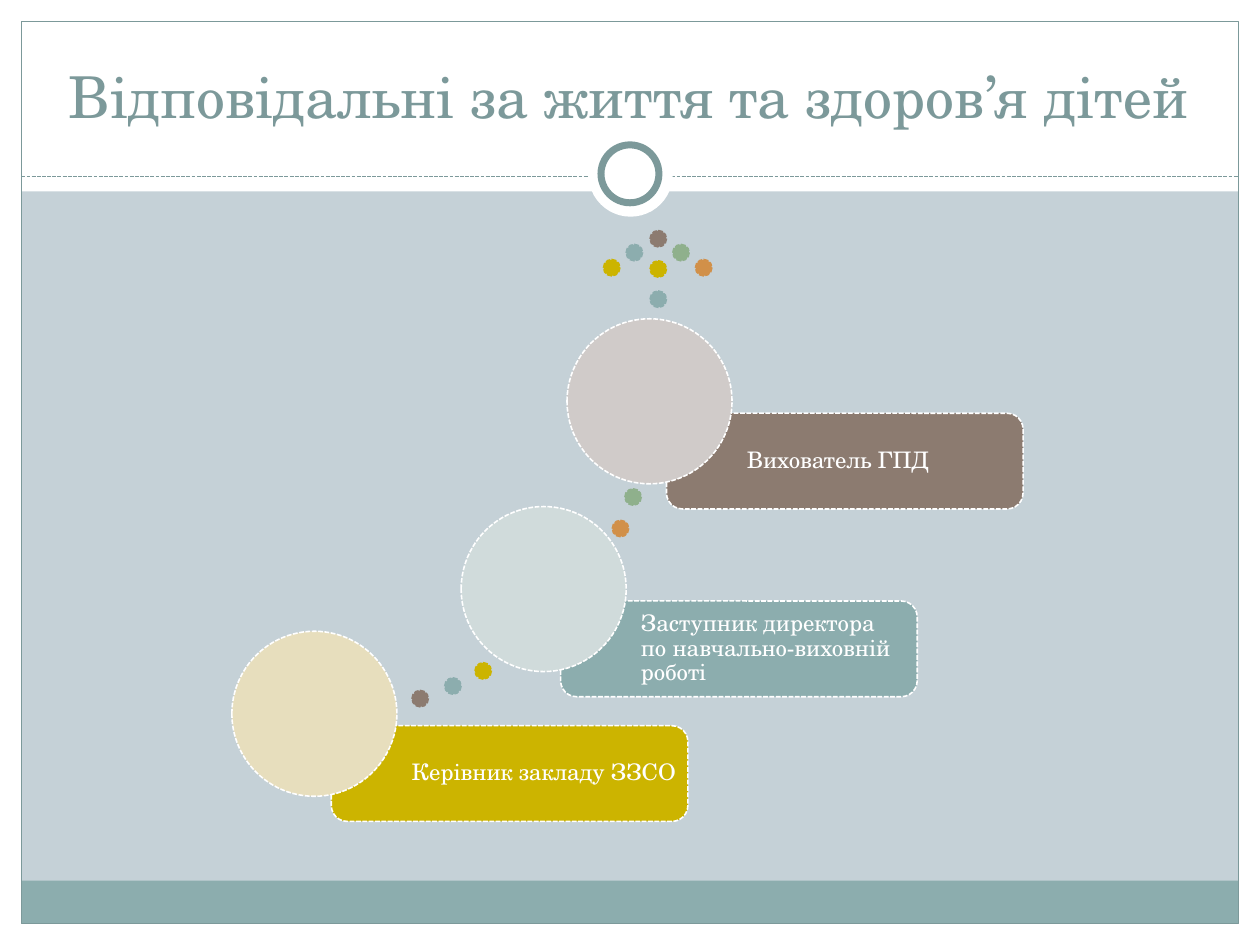
from itertools import cycle

from lxml import etree
from pptx import Presentation
from pptx.dml.color import RGBColor
from pptx.enum.dml import MSO_LINE
from pptx.enum.shapes import MSO_CONNECTOR, MSO_SHAPE
from pptx.enum.text import MSO_ANCHOR, PP_ALIGN
from pptx.oxml.ns import qn
from pptx.util import Inches, Pt

COLORS = {
    "background": "C5D1D7", "white": "FFFFFF", "frame": "7C999A",
    "gold": "CCB400", "teal": "8CADAE", "brown": "8C7B70",
    "green": "8FB08C", "orange": "D19049",
    "pale gold": "E7DEBD", "pale teal": "D0DBDB", "pale brown": "D0CBC9",
}
FONT = "TeX Gyre Schola"
TITLE = "Відповідальні за життя та здоров’я дітей"

# Text, colour, left and top of the circle; bottom step first
STEPS = [
    ("Керівник закладу ЗЗСО", "gold", 1.84, 5.01),
    ("Заступник директора по навчально-виховній роботі", "teal", 3.66, 4.02),
    ("Вихователь ГПД", "brown", 4.5, 2.53),
]
CIRCLE = 1.31
LABEL_OFFSET = (0.79, 0.75)
LABEL_SIZE = (2.83, 0.76)

DOT = 0.13
DOT_COLORS = ["gold", "teal", "brown", "green", "orange"]
DOTS = [
    (3.77, 5.26), (3.53, 5.38), (3.27, 5.48),
    (4.96, 3.88), (4.86, 4.13),
    (4.79, 2.06), (4.97, 1.94), (5.16, 1.83), (5.34, 1.94), (5.52, 2.06),
    (5.16, 2.07), (5.16, 2.31),
]

WIDTH, HEIGHT, MARGIN = 10, 7.5, 0.17
BANDS = [
    (0, HEIGHT - MARGIN, WIDTH, MARGIN, "white"),
    (0, 0, WIDTH, 1.52, "white"),
    (0, 0, MARGIN, HEIGHT, "white"),
    (WIDTH - MARGIN, 0, MARGIN, HEIGHT, "white"),
    (MARGIN, 6.99, WIDTH - 2 * MARGIN, 0.34, "teal"),
]


def color(name):
    return RGBColor.from_string(COLORS[name])


def add_shape(page, kind, left, top, width, height, fill=None, line=None,
              weight=0.9, dash=None):
    shape = page.shapes.add_shape(
        kind, Inches(left), Inches(top), Inches(width), Inches(height))
    shape.shadow.inherit = False
    if fill:
        shape.fill.solid()
        shape.fill.fore_color.rgb = color(fill)
    else:
        shape.fill.background()
    if line:
        shape.line.color.rgb = color(line)
        shape.line.width = Pt(weight)
        shape.line.dash_style = dash
    else:
        shape.line.fill.background()
    return shape


def set_text(shape, text, size, font_color, align, anchor, margins):
    frame = shape.text_frame
    frame.word_wrap = True
    frame.vertical_anchor = anchor
    (frame.margin_left, frame.margin_top,
     frame.margin_right, frame.margin_bottom) = map(Inches, margins)
    frame.text = text
    para = frame.paragraphs[0]
    para.alignment = align
    font = para.runs[0].font
    font.name, font.size = FONT, Pt(size)
    font.color.rgb = color(font_color)
    return para


def add_frame(page):
    for left, top, width, height, fill in BANDS:
        add_shape(page, MSO_SHAPE.RECTANGLE, left, top, width, height, fill)
    add_shape(page, MSO_SHAPE.RECTANGLE, MARGIN, MARGIN, WIDTH - 2 * MARGIN,
              HEIGHT - 2 * MARGIN, line="frame", weight=0.75)
    rule = page.shapes.add_connector(
        MSO_CONNECTOR.STRAIGHT, Inches(MARGIN), Inches(1.4),
        Inches(WIDTH - MARGIN), Inches(1.4))
    rule.line.color.rgb = color("frame")
    rule.line.width = Pt(0.75)
    rule.line.dash_style = MSO_LINE.SQUARE_DOT
    etree.SubElement(rule._element.spPr, qn("a:effectLst"))
    add_shape(page, MSO_SHAPE.OVAL, 4.67, 1.05, 0.67, 0.67, "white")
    add_shape(page, MSO_SHAPE.OVAL, 4.77, 1.15, 0.46, 0.46, "white", "frame", 4)


def add_title(page):
    box = page.shapes.add_textbox(
        Inches(0.33), Inches(0.25), Inches(9.33), Inches(0.83))
    set_text(box, TITLE, 33, "frame", PP_ALIGN.CENTER, MSO_ANCHOR.BOTTOM,
             (0.1, 0.05, 0.1, 0.05))


def add_steps(page):
    dash = MSO_LINE.SQUARE_DOT
    for (left, top), name in zip(DOTS, cycle(DOT_COLORS)):
        add_shape(page, MSO_SHAPE.OVAL, left, top, DOT, DOT, name, name, dash=dash)
    for text, name, left, top in STEPS:
        label = add_shape(
            page, MSO_SHAPE.ROUNDED_RECTANGLE, left + LABEL_OFFSET[0],
            top + LABEL_OFFSET[1], *LABEL_SIZE, name, "white", dash=dash)
        para = set_text(label, text, 13, "white", PP_ALIGN.LEFT,
                        MSO_ANCHOR.MIDDLE, (0.6, 0.05, 0.05, 0.05))
        para.line_spacing = 0.9
        add_shape(page, MSO_SHAPE.OVAL, left, top, CIRCLE, CIRCLE,
                  f"pale {name}", "white", dash=dash)


def main():
    deck = Presentation()
    deck.slide_width, deck.slide_height = Inches(WIDTH), Inches(HEIGHT)
    page = deck.slides.add_slide(deck.slide_layouts[6])
    page.background.fill.solid()
    page.background.fill.fore_color.rgb = color("background")
    add_frame(page)
    add_title(page)
    add_steps(page)
    deck.save("out.pptx")


if __name__ == "__main__":
    main()
